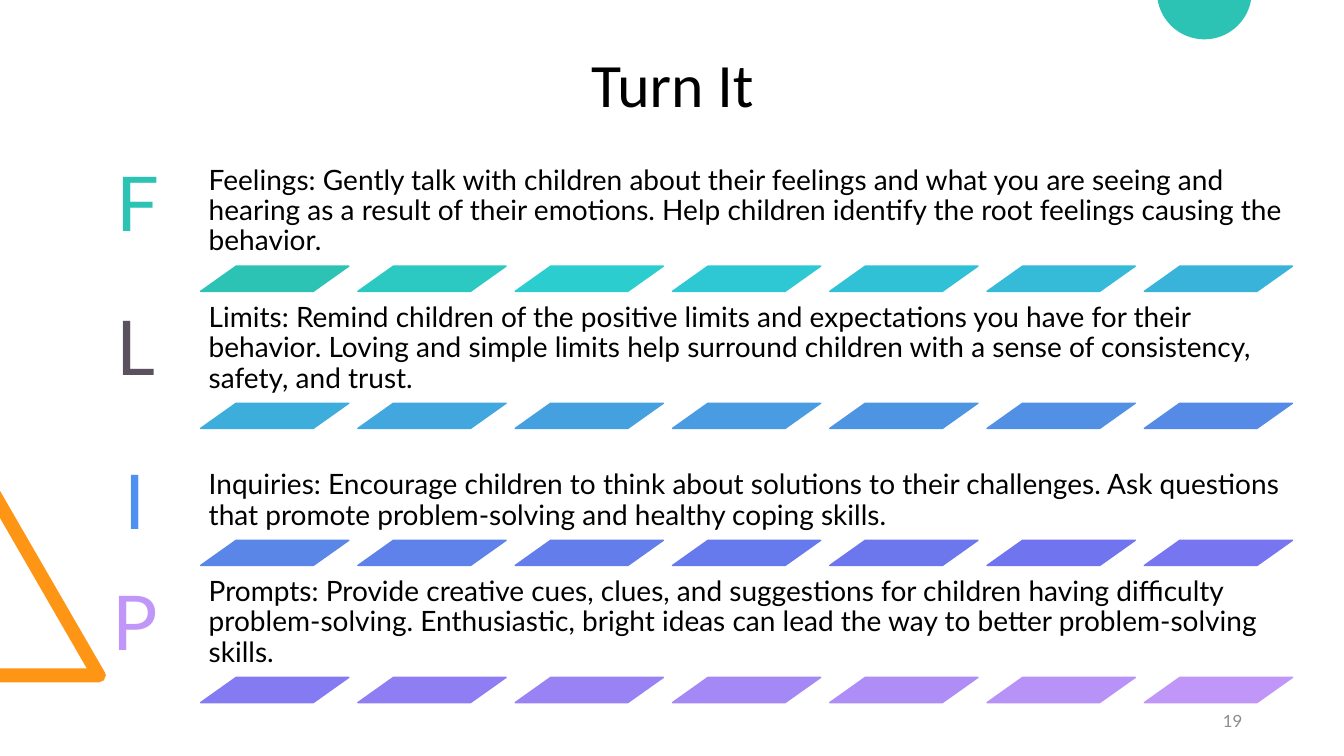
import math

from pptx import Presentation
from pptx.dml.color import RGBColor
from pptx.enum.shapes import MSO_SHAPE
from pptx.enum.text import MSO_ANCHOR, PP_ALIGN
from pptx.util import Inches, Pt

PARALLELOGRAM = MSO_SHAPE.PARALLELOGRAM
TOP, MIDDLE, BOTTOM = MSO_ANCHOR.TOP, MSO_ANCHOR.MIDDLE, MSO_ANCHOR.BOTTOM
LEFT, CENTER, RIGHT = PP_ALIGN.LEFT, PP_ALIGN.CENTER, PP_ALIGN.RIGHT

# letter, letter colour, letter centre x, letter top, text, bar colours
ROWS = [
    ("F", "2CC3B4", 1.37, 1.5,
     "Feelings: Gently talk with children about their feelings and what you are "
     "seeing and hearing as a result of their emotions. Help children identify "
     "the root feelings causing the behavior.",
     "2CC3B4 2CC9C2 2CCDCF 2DC8D4 31C1D6 35BAD8 39B3DA"),
    ("L", "5B5260", 1.35, 2.93,
     "Limits: Remind children of the positive limits and expectations you have "
     "for their behavior. Loving and simple limits help surround children with "
     "a sense of consistency, safety, and trust.",
     "3DADDC 41A7DE 45A0E0 499BE2 4D95E3 5190E5 558BE7"),
    ("I", "4E91F0", 1.34, 4.45,
     "Inquiries: Encourage children to think about solutions to their "
     "challenges. Ask questions that promote problem-solving and healthy "
     "coping skills.",
     "5A86E8 5E82EA 637EEB 677AED 6C77EE 7074EF 7875F1"),
    ("P", "C097F8", 1.34, 5.65,
     "Prompts: Provide creative cues, clues, and suggestions for children "
     "having difficulty problem-solving. Enthusiastic, bright ideas can lead "
     "the way to better problem-solving skills.",
     "847AF2 8F7EF3 9983F4 A488F5 AE8DF6 B792F7 C097F8"),
]
ROW_TOP, ROW_STEP = 1.63, 1.36
BAR_LEFT, BAR_STEP = 1.99, 1.56


def paint(sp, color, outlined=False):
    sp.shadow.inherit = False
    sp.fill.solid()
    sp.fill.fore_color.rgb = RGBColor.from_string(color)
    if outlined:
        sp.line.color.rgb = RGBColor.from_string(color)
        sp.line.width = Pt(1)
    else:
        sp.line.fill.background()


def add_text(text, x, y, w, h, size, color, font="Lato", align=LEFT, anchor=TOP):
    """Add a one-paragraph text box and return it."""
    sp = s.shapes.add_textbox(Inches(x), Inches(y), Inches(w), Inches(h))
    tf = sp.text_frame
    tf.word_wrap = True
    tf.vertical_anchor = anchor
    p = tf.paragraphs[0]
    p.text = text
    p.alignment = align
    p.font.name = font
    p.font.size = Pt(size)
    p.font.color.rgb = RGBColor.from_string(color)
    return sp


prs = Presentation()
prs.slide_width, prs.slide_height = Inches(13.33), Inches(7.5)
s = prs.slides.add_slide(prs.slide_layouts[6])

# Corner decorations, cut off by the slide edges
triangle = [(0, 6.77), (0, 6.63), (0.86, 6.63), (0, 5.14), (0, 4.87),
            (1.04, 6.67), (1.05, 6.7), (1.03, 6.75), (0.98, 6.77)]
cx, cy, radius = 11.945, -0.08, 0.47
start = math.asin(-cy / radius)
angles = [start + (math.pi - 2 * start) * i / 40 for i in range(41)]
circle = [(cx + radius * math.cos(a), cy + radius * math.sin(a)) for a in angles]
for outline, color in ((triangle, "FF9514"), (circle, "2CC3B4")):
    points = [(Inches(x), Inches(y)) for x, y in outline]
    builder = s.shapes.build_freeform(*points[0])
    builder.add_line_segments(points[1:], close=True)
    paint(builder.convert_to_shape(), color)

title = add_text("Turn It", 0.92, 0.14, 11.5, 1.45, 44, "000000", "Calibri", CENTER, MIDDLE)
title.text_frame.paragraphs[0].line_spacing = 0.9
add_text("19", 9.42, 6.95, 3, 0.4, 12, "8C8C8C", align=RIGHT, anchor=MIDDLE)

for row, (letter, color, center, letter_top, text, bar_colors) in enumerate(ROWS):
    top = ROW_TOP + row * ROW_STEP
    tf = add_text(text, BAR_LEFT, top, 11.05, 1, 20, "000000", anchor=BOTTOM).text_frame
    tf.margin_left = tf.margin_right = tf.margin_top = tf.margin_bottom = Inches(0.08)
    p = tf.paragraphs[0]
    p.line_spacing = 0.9
    p.space_after = Pt(7)

    for col, bar_color in enumerate(bar_colors.split()):
        bar = s.shapes.add_shape(PARALLELOGRAM, Inches(BAR_LEFT + col * BAR_STEP),
                                 Inches(top + 1.01), Inches(1.47), Inches(0.25))
        bar.adjustments[0] = 1.408
        paint(bar, bar_color, outlined=True)

    add_text(letter, center - 0.4, letter_top, 0.8, 1.01, 54, color, align=CENTER)

prs.save("out.pptx")
